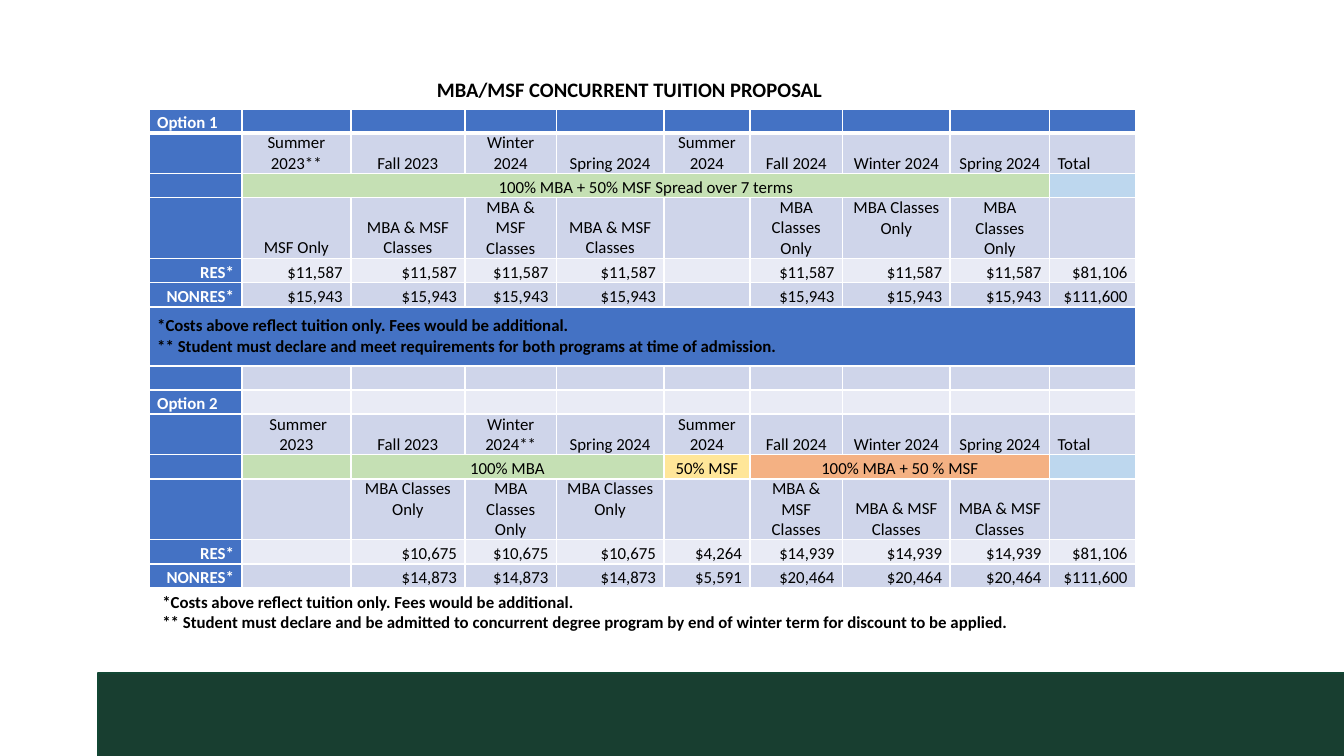
from lxml import etree
from pptx import Presentation
from pptx.dml.color import RGBColor
from pptx.enum.shapes import MSO_SHAPE
from pptx.enum.text import MSO_ANCHOR, MSO_AUTO_SIZE, PP_ALIGN
from pptx.oxml.ns import qn
from pptx.util import Inches, Pt

LEFT, CENTER, RIGHT = PP_ALIGN.LEFT, PP_ALIGN.CENTER, PP_ALIGN.RIGHT
TOP, MIDDLE, BOTTOM = MSO_ANCHOR.TOP, MSO_ANCHOR.MIDDLE, MSO_ANCHOR.BOTTOM
FIT_SHAPE = MSO_AUTO_SIZE.SHAPE_TO_FIT_TEXT
RECTANGLE = MSO_SHAPE.RECTANGLE

BLACK = RGBColor(0x00, 0x00, 0x00)
WHITE = RGBColor(0xFF, 0xFF, 0xFF)
BLUE = RGBColor(0x44, 0x72, 0xC4)
BANDS = [RGBColor(0xE9, 0xEB, 0xF5), RGBColor(0xCF, 0xD5, 0xEA)]
GREEN = RGBColor(0xC5, 0xE0, 0xB4)
YELLOW = RGBColor(0xFF, 0xE6, 0x99)
ORANGE = RGBColor(0xF4, 0xB1, 0x83)
PALE_BLUE = RGBColor(0xBD, 0xD7, 0xEE)
DARK_GREEN = RGBColor(0x18, 0x3E, 0x30)
DEEP_GREEN = RGBColor(0x12, 0x47, 0x34)


def write(frame, text, size=9, color=BLACK, bold=False, align=LEFT):
    for index, line in enumerate(text.split("\n")):
        para = frame.add_paragraph() if index else frame.paragraphs[0]
        para.alignment = align
        if not line:
            etree.SubElement(para._p, qn("a:endParaRPr"), sz=str(size * 100))
            continue
        span = para.add_run()
        span.text = line
        span.font.name = "Calibri"
        span.font.size = Pt(size)
        span.font.bold = bold
        span.font.color.rgb = color


def draw_borders(cell, bottom):
    for side, width in (("L", 1), ("R", 1), ("T", 1), ("B", bottom)):
        line = etree.SubElement(cell._tc.get_or_add_tcPr(), qn(f"a:ln{side}"), w=str(Pt(width)))
        fill = etree.SubElement(line, qn("a:solidFill"))
        etree.SubElement(fill, qn("a:srgbClr"), val=str(WHITE))


deck = Presentation()
deck.slide_width = Inches(10)
deck.slide_height = deck.slide_width * 9 // 16
page = deck.slides.add_slide(deck.slide_layouts[5])

bar = page.shapes.add_shape(RECTANGLE, Inches(0.73), Inches(5.01), Inches(9.28), Inches(0.64))
bar.shadow.inherit = False
bar.fill.solid()
bar.fill.fore_color.rgb = DARK_GREEN
bar.line.color.rgb = DEEP_GREEN
bar.line.width = Pt(1)

MBA, MSF, BOTH = "MBA Classes Only", "MSF Only", "MBA & MSF Classes"
FEES = "*Costs above reflect tuition only. Fees would be additional.\n** Student must declare and "
TERMS = [" Summer 2023", "Fall 2023", "Winter 2024", "Spring 2024",
         "Summer 2024", "Fall 2024", "Winter 2024", "Spring 2024", "Total"]
rows = [
    ["Option 1"],
    ["", "Summer 2023**"] + TERMS[1:],
    ["", "100% MBA + 50% MSF Spread over 7 terms"],
    ["", MSF] + [BOTH] * 3 + [""] + [MBA] * 3,
    ["RES*"] + ["$11,587"] * 4 + [""] + ["$11,587"] * 3 + ["$81,106"],
    ["NONRES*"] + ["$15,943"] * 4 + [""] + ["$15,943"] * 3 + ["$111,600"],
    [FEES + "meet requirements for both programs at time of admission."],
    [],
    ["Option 2"],
    [""] + TERMS[:2] + ["Winter 2024**"] + TERMS[3:],
    ["", "", "100% MBA", "", "", "50% MSF", "100% MBA + 50 % MSF"],
    ["", ""] + [MBA] * 3 + [""] + [BOTH] * 3,
    ["RES*", ""] + ["$10,675"] * 3 + ["$4,264"] + ["$14,939"] * 3 + ["$81,106"],
    ["NONRES*", ""] + ["$14,873"] * 3 + ["$5,591"] + ["$20,464"] * 3 + ["$111,600"],
]
widths = [0.69, 0.81, 0.85, 0.68, 0.8, 0.64, 0.69, 0.8, 0.74, 0.64]
tall_rows = {1: 0.28, 3: 0.43, 6: 0.44, 9: 0.28, 11: 0.43}
heights = [tall_rows.get(row, 0.18) for row in range(len(rows))]
merges = [(2, 1, 8), (6, 0, 9), (10, 2, 4), (10, 6, 8)]
top_cells = {(3, 7), (3, 8), (11, 2), (11, 3), (11, 4)}
option_1_bar = [GREEN] * 8 + [PALE_BLUE]
option_2_bar = [GREEN] * 4 + [YELLOW] + [ORANGE] * 3 + [PALE_BLUE]
bars = {2: [BLUE] + option_1_bar, 10: [BLUE] + option_2_bar}

table_left, table_top, table_width = Inches(1.11), Inches(0.81), Inches(7.34)
table = page.shapes.add_table(len(rows), len(widths), table_left, table_top,
                              table_width, Inches(sum(heights))).table
table.first_col = True
for column, width in zip(table.columns, widths):
    column.width = Inches(width)
for table_row, height in zip(table.rows, heights):
    table_row.height = Inches(height)

for row, texts in enumerate(rows):
    for column in range(len(widths)):
        text = texts[column] if column < len(texts) else ""
        cell = table.cell(row, column)
        cell.margin_left = cell.margin_right = Inches(0.06)
        cell.margin_top = cell.margin_bottom = 0
        cell.vertical_anchor = MIDDLE if row == 6 else TOP if (row, column) in top_cells else BOTTOM
        draw_borders(cell, bottom=1 if row else 3)
        cell.fill.solid()
        if row in bars:
            cell.fill.fore_color.rgb = bars[row][column]
        else:
            cell.fill.fore_color.rgb = BLUE if column == 0 or row in (0, 6) else BANDS[row % 2]
        if text.startswith("$") or text.endswith("RES*"):
            align = RIGHT
        else:
            align = LEFT if column in (0, 9) else CENTER
        write(cell.text_frame, text, align=align, bold=column == 0,
              color=WHITE if column == 0 and row != 6 else BLACK)

for row, first, last in merges:
    table.cell(row, first).merge(table.cell(row, last))

title = page.shapes.title
title.left, title.top, title.width, title.height = Inches(3.15), Inches(0.52), Inches(3.1), Inches(0.29)
title.text_frame.word_wrap = False
title.text_frame.auto_size = FIT_SHAPE
title.text_frame.vertical_anchor = MIDDLE
write(title.text_frame, "MBA/MSF CONCURRENT TUITION PROPOSAL", size=11, bold=True)

notes = page.shapes.add_textbox(table_left, Inches(4.35), table_width, Inches(0.4)).text_frame
notes.word_wrap = True
notes.auto_size = FIT_SHAPE
write(notes, FEES + "be admitted to concurrent degree program by end of winter term for discount to be applied.", bold=True)

deck.save("out.pptx")
